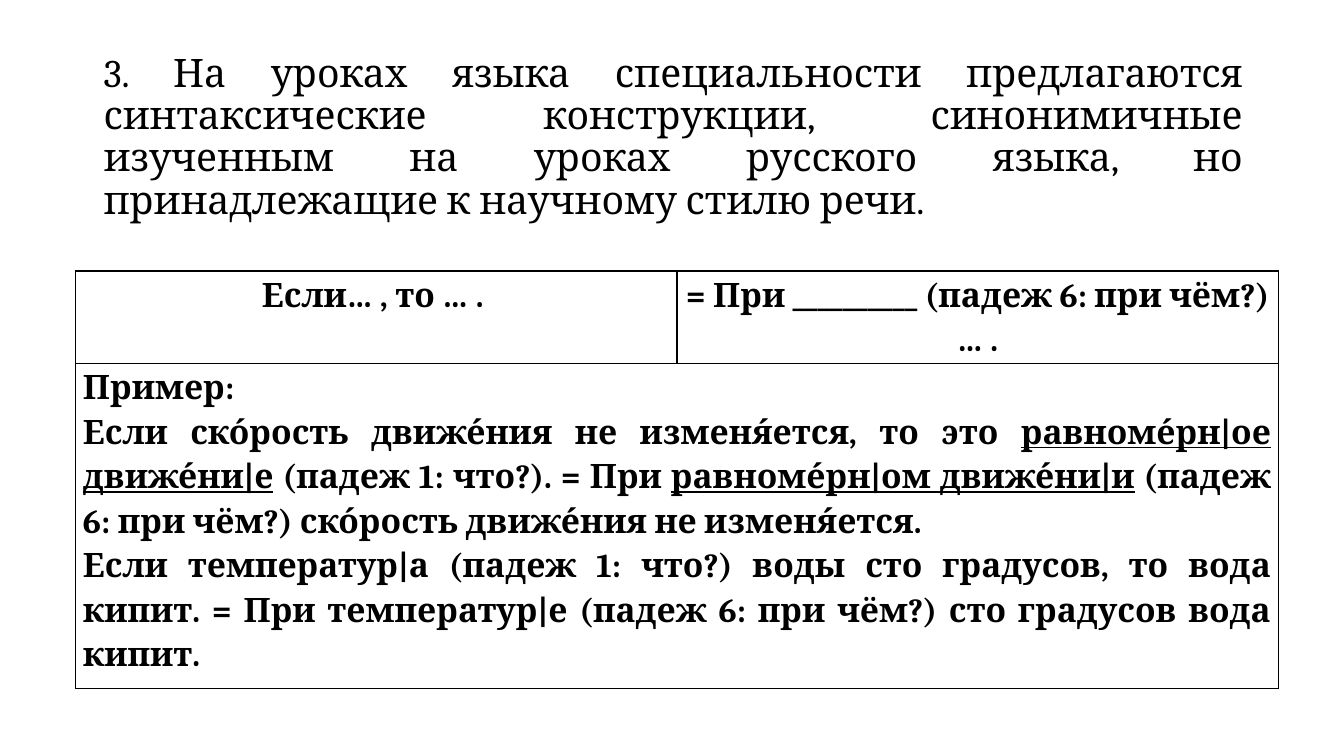
from lxml import etree
from pptx import Presentation
from pptx.dml.color import RGBColor
from pptx.enum.text import PP_ALIGN
from pptx.oxml.ns import qn
from pptx.util import Cm, Pt

BLACK = RGBColor(0x00, 0x00, 0x00)
FONT = "Cambria"

STATEMENT = (
    "3. На уроках языка специальности предлагаются синтаксические конструкции, "
    "синонимичные изученным на уроках русского языка, но принадлежащие "
    "к научному стилю речи."
)
PATTERNS = ["Если… , то … . ", "= При __________ (падеж 6: при чём?) … ."]
# Each paragraph is a list of (text, underlined) runs
EXAMPLES = [
    [("Пример: ", False)],
    [
        ("Если ско́рость движе́ния не изменя́ется, то это ", False),
        ("равноме́рн|ое движе́ни|е", True),
        (" (падеж 1: что?). = При ", False),
        ("равноме́рн|ом движе́ни|и", True),
        (" (падеж 6: при чём?) ско́рость движе́ния не изменя́ется.", False),
    ],
    [
        ("Если температур|а (падеж 1: что?) воды сто градусов, то вода кипит. "
         "= При температур|е (падеж 6: при чём?) сто градусов вода кипит.", False),
    ],
]


def add_runs(paragraph, runs, size, bold, alignment, line_spacing):
    paragraph.alignment = alignment
    paragraph.line_spacing = line_spacing
    for text, underlined in runs:
        run = paragraph.add_run()
        run.text = text
        run.font.name = FONT
        run.font.size = Pt(size)
        run.font.bold = bold
        run.font.underline = underlined
        run.font.color.rgb = BLACK


def add_statement(slide, left, top, width, height):
    text_frame = slide.shapes.add_textbox(left, top, width, height).text_frame
    text_frame.word_wrap = True
    paragraph = text_frame.paragraphs[0]
    paragraph.space_before = Pt(10)
    add_runs(paragraph, [(STATEMENT, False)], 28, False, PP_ALIGN.JUSTIFY, 0.9)


def style_cell(cell):
    cell.margin_left = cell.margin_right = Cm(0.18)
    cell.margin_top = cell.margin_bottom = 0
    properties = cell._tc.get_or_add_tcPr()
    for side in ("a:lnL", "a:lnR", "a:lnT", "a:lnB"):
        line = etree.SubElement(properties, qn(side), w=str(Pt(1)))
        fill = etree.SubElement(line, qn("a:solidFill"))
        etree.SubElement(fill, qn("a:srgbClr"), val=str(BLACK))
    cell.fill.background()


def fill_cell(cell, paragraphs, alignment):
    text_frame = cell.text_frame
    for index, runs in enumerate(paragraphs):
        paragraph = text_frame.add_paragraph() if index else text_frame.paragraphs[0]
        add_runs(paragraph, runs, 24, True, alignment, 1.15)


def add_pattern_table(slide, left, top, width, row_heights):
    table = slide.shapes.add_table(
        len(row_heights), len(PATTERNS), left, top, width, sum(row_heights)
    ).table
    table.first_row = table.horz_banding = False
    for row, height in zip(table.rows, row_heights):
        row.height = height
    for cell in table.iter_cells():
        style_cell(cell)

    # Pair of synonymous patterns
    for column, pattern in enumerate(PATTERNS):
        fill_cell(table.cell(0, column), [[(pattern, False)]], PP_ALIGN.CENTER)

    # Examples across the full width
    examples = table.cell(1, 0)
    examples.merge(table.cell(1, len(PATTERNS) - 1))
    fill_cell(examples, EXAMPLES, PP_ALIGN.JUSTIFY)


def main():
    presentation = Presentation()
    presentation.slide_width = Cm(33.87)
    presentation.slide_height = Cm(19.05)
    slide = presentation.slides.add_slide(presentation.slide_layouts[6])
    add_statement(slide, Cm(2.36), Cm(1.22), Cm(29.21), Cm(12.09))
    add_pattern_table(slide, Cm(1.91), Cm(6.83), Cm(30.3), [Cm(1.55), Cm(6.15)])
    presentation.save("out.pptx")


if __name__ == "__main__":
    main()
